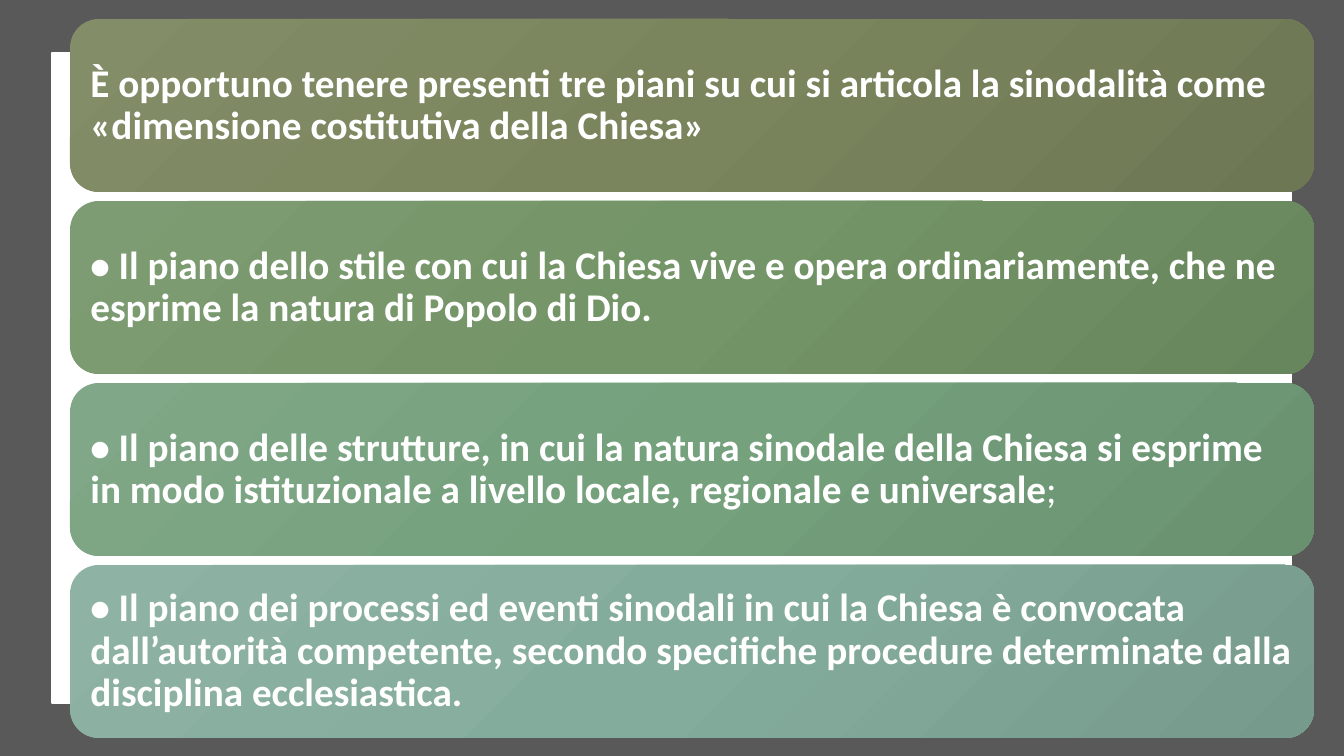
import copy
from dataclasses import dataclass

import pptx
import pptx.dml.color
import pptx.enum.shapes
import pptx.enum.text
import pptx.oxml.ns
import pptx.shapes.autoshape
import pptx.slide
import pptx.text.text
import pptx.util

RGBColor = pptx.dml.color.RGBColor
Shape = pptx.shapes.autoshape.Shape
ShapeKind = pptx.enum.shapes.MSO_SHAPE

EMU_PER_PX = 914400 / 100.8
PAGE_WIDTH, PAGE_HEIGHT = 1344, 756
CARD_LEFT, CARD_TOP = 70, 19
CARD_WIDTH, CARD_HEIGHT = 1244, 173
CARD_PITCH = 182
CARD_INSET = 12

WHITE = RGBColor(0xFF, 0xFF, 0xFF)
DARK_GRAY = RGBColor(0x59, 0x59, 0x59)
OLIVE = (RGBColor(0x83, 0x8E, 0x69), RGBColor(0x7A, 0x85, 0x5D), RGBColor(0x6E, 0x77, 0x54))
GREEN = (RGBColor(0x7E, 0x9C, 0x73), RGBColor(0x74, 0x95, 0x67), RGBColor(0x68, 0x86, 0x5D))
JADE = (RGBColor(0x80, 0xA7, 0x87), RGBColor(0x75, 0xA1, 0x7D), RGBColor(0x69, 0x91, 0x70))
TEAL = (RGBColor(0x8E, 0xB2, 0xA4), RGBColor(0x84, 0xAC, 0x9D), RGBColor(0x76, 0x9B, 0x8D))


@dataclass(frozen=True)
class Card:
    text: str
    colors: tuple[RGBColor, RGBColor, RGBColor]
    plain_ending: str = ""


CARDS = [
    Card(
        "È opportuno tenere presenti tre piani su cui si articola la sinodalità come "
        "«dimensione costitutiva della Chiesa»",
        OLIVE,
    ),
    Card(
        "• Il piano dello stile con cui la Chiesa vive e opera ordinariamente, che ne "
        "esprime la natura di Popolo di Dio.",
        GREEN,
    ),
    Card(
        "• Il piano delle strutture, in cui la natura sinodale della Chiesa si esprime "
        "in modo istituzionale a livello locale, regionale e universale",
        JADE,
        plain_ending=";",
    ),
    Card(
        "• Il piano dei processi ed eventi sinodali in cui la Chiesa è convocata "
        "dall’autorità competente, secondo specifiche procedure determinate dalla "
        "disciplina ecclesiastica.",
        TEAL,
    ),
]


def px(length: int) -> int:
    return round(length * EMU_PER_PX)


def add_box(
    page: pptx.slide.Slide, kind: ShapeKind, left: int, top: int, width: int, height: int
) -> Shape:
    box = page.shapes.add_shape(kind, px(left), px(top), px(width), px(height))
    box.shadow.inherit = False
    box.line.fill.background()
    return box


def fill_solid(box: Shape, color: RGBColor) -> None:
    box.fill.solid()
    box.fill.fore_color.rgb = color


def fill_gradient(box: Shape, colors: tuple[RGBColor, ...]) -> None:
    box.fill.gradient()
    box.fill.gradient_angle = 315
    stop_list = box.element.find(".//" + pptx.oxml.ns.qn("a:gsLst"))
    stop_list.append(copy.deepcopy(stop_list[-1]))
    for index, (stop, color) in enumerate(zip(box.fill.gradient_stops, colors)):
        stop.position = index / (len(colors) - 1)
        stop.color.rgb = color


def add_text(
    para: pptx.text.text._Paragraph,
    text: str,
    *,
    size: int = 28,
    bold: bool = True,
    color: RGBColor = WHITE,
    font: str = "Calibri",
) -> None:
    span = para.add_run()
    span.text = text
    span.font.size = pptx.util.Pt(size)
    span.font.bold = bold
    span.font.color.rgb = color
    span.font.name = font


def add_card(page: pptx.slide.Slide, card: Card, top: int) -> None:
    box = add_box(page, ShapeKind.ROUNDED_RECTANGLE, CARD_LEFT, top, CARD_WIDTH, CARD_HEIGHT)
    fill_gradient(box, card.colors)
    frame = box.text_frame
    frame.word_wrap = True
    frame.vertical_anchor = pptx.enum.text.MSO_ANCHOR.MIDDLE
    frame.margin_left = frame.margin_right = px(CARD_INSET)
    frame.margin_top = frame.margin_bottom = px(CARD_INSET)
    para = frame.paragraphs[0]
    para.alignment = pptx.enum.text.PP_ALIGN.LEFT
    para.line_spacing = 0.9
    add_text(para, card.text)
    if card.plain_ending:
        add_text(para, card.plain_ending, bold=False)


def main() -> None:
    deck = pptx.Presentation()
    deck.slide_width = px(PAGE_WIDTH)
    deck.slide_height = px(PAGE_HEIGHT)
    page = deck.slides.add_slide(deck.slide_layouts[6])

    backdrop = add_box(page, ShapeKind.RECTANGLE, 0, 0, PAGE_WIDTH, PAGE_HEIGHT)
    fill_solid(backdrop, DARK_GRAY)
    panel = add_box(page, ShapeKind.RECTANGLE, 52, 53, 1239, 650)
    fill_solid(panel, WHITE)
    panel.line.color.rgb = WHITE
    panel.line.width = pptx.util.Pt(1)

    for index, card in enumerate(CARDS):
        add_card(page, card, CARD_TOP + index * CARD_PITCH)

    deck.save("out.pptx")


if __name__ == "__main__":
    main()
